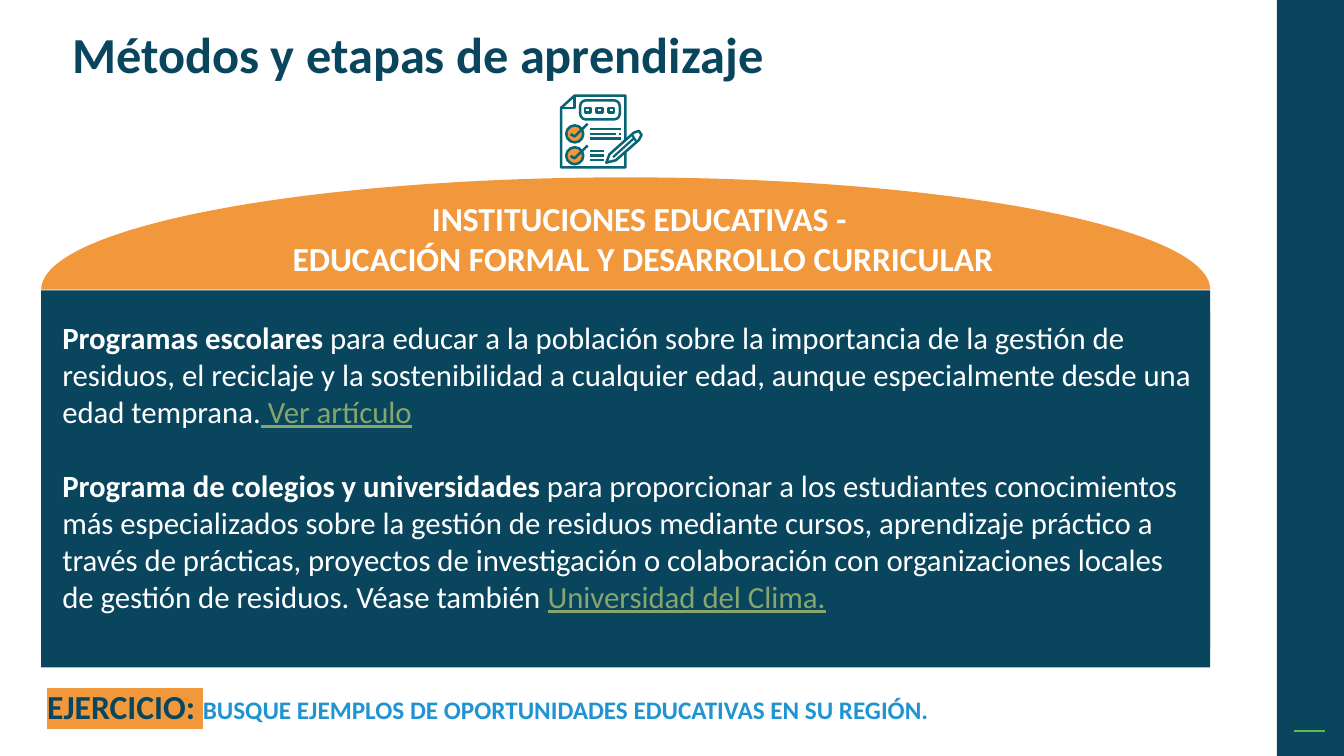
from lxml import etree
from pptx import Presentation
from pptx.dml.color import RGBColor
from pptx.enum.shapes import MSO_CONNECTOR, MSO_SHAPE
from pptx.enum.text import MSO_ANCHOR, MSO_AUTO_SIZE, PP_ALIGN
from pptx.oxml.ns import qn
from pptx.util import Cm, Pt
import math

RECTANGLE = MSO_SHAPE.RECTANGLE
ROUNDED = MSO_SHAPE.ROUNDED_RECTANGLE
OVAL = MSO_SHAPE.OVAL
STRAIGHT = MSO_CONNECTOR.STRAIGHT
LEFT, CENTER = PP_ALIGN.LEFT, PP_ALIGN.CENTER
TOP, MIDDLE = MSO_ANCHOR.TOP, MSO_ANCHOR.MIDDLE
NO_AUTOFIT = MSO_AUTO_SIZE.NONE

NAVY, ORANGE, TEAL, WHITE = "09465E", "F1983D", "086575", "FFFFFF"
LINK, BLUE, GREEN = "87A66E", "2094D2", "60BA47"

TITLE = {"size": Pt(36), "bold": True, "color": NAVY}
HEADING = {"size": Pt(24), "bold": True, "color": WHITE}
STRONG = {"size": Pt(22), "bold": True, "color": WHITE}
NORMAL = {"size": Pt(22), "bold": False, "color": WHITE}
LINKED = {"size": Pt(22), "bold": False, "color": LINK, "underline": True}
LABEL = {"size": Pt(24), "bold": True, "color": NAVY, "highlight": ORANGE}
TASK = {"size": Pt(18), "bold": True, "color": BLUE}

PROGRAMS = [
    [
        ("Programas escolares ", STRONG),
        ("para educar a la población sobre la importancia de la gestión de residuos, "
         "el reciclaje y la sostenibilidad a cualquier edad, aunque especialmente "
         "desde una edad temprana.", NORMAL),
        (" Ver artículo", LINKED),
    ],
    [
        ("Programa de colegios y universidades ", STRONG),
        ("para proporcionar a los estudiantes conocimientos más especializados sobre "
         "la gestión de residuos mediante cursos, aprendizaje práctico a través de "
         "prácticas, proyectos de investigación o colaboración con organizaciones "
         "locales de gestión de residuos. Véase también ", NORMAL),
        ("Universidad del Clima.", LINKED),
    ],
]


def color(value):
    return RGBColor.from_string(value)


def paint(shape, fill=None, line=None, width=1.8):
    shape.shadow.inherit = False
    if fill:
        shape.fill.solid()
        shape.fill.fore_color.rgb = color(fill)
    else:
        shape.fill.background()
    if line:
        shape.line.color.rgb = color(line)
        shape.line.width = Pt(width)
    else:
        shape.line.fill.background()
    return shape


def add_block(shapes, kind, box, fill=None, line=None):
    return paint(shapes.add_shape(kind, *map(Cm, box)), fill, line)


def add_outline(shapes, points, fill=None, line=None, close=False):
    start, *others = [(Cm(x), Cm(y)) for x, y in points]
    builder = shapes.build_freeform(*start, scale=1.0)
    builder.add_line_segments(others, close=close)
    return paint(builder.convert_to_shape(), fill, line)


def add_line(shapes, start, end, stroke, width):
    line = shapes.add_connector(STRAIGHT, *map(Cm, (*start, *end)))
    line.line.color.rgb = color(stroke)
    line.line.width = Pt(width)
    etree.SubElement(line._element.spPr, qn("a:effectLst"))


def add_run(paragraph, text, style):
    run = paragraph.add_run()
    run.text = text
    run.font.name = "Calibri"
    for name, value in style.items():
        if name == "color":
            run.font.color.rgb = color(value)
        elif name == "highlight":
            highlight = etree.Element(qn("a:highlight"))
            etree.SubElement(highlight, qn("a:srgbClr"), val=value)
            run._r.rPr.find(qn("a:solidFill")).addnext(highlight)
        else:
            setattr(run.font, name, value)


def write(shape, paragraphs, anchor=TOP, **layout):
    frame = shape.text_frame
    frame.word_wrap = True
    frame.auto_size = NO_AUTOFIT
    frame.vertical_anchor = anchor
    gap = layout.pop("gap", 0)
    for index, runs in enumerate(paragraphs):
        paragraph = frame.add_paragraph() if index else frame.paragraphs[0]
        paragraph.space_before = Pt(gap if index else 0)
        for name, value in layout.items():
            setattr(paragraph, name, value)
        for text, style in runs:
            add_run(paragraph, text, style)


def add_title(slide, text):
    title = slide.shapes.title
    title.left, title.top, title.width, title.height = map(Cm, (1.57, 0.66, 21.36, 1.55))
    write(title, [[(text, TITLE)]], MIDDLE, alignment=LEFT, line_spacing=0.9)


def add_text(slide, box, paragraphs, **layout):
    write(slide.shapes.add_textbox(*map(Cm, box)), paragraphs, **layout)


def add_dome(slide, left, top, width, height):
    steps = 90
    points = []
    for step in range(steps + 1):
        angle = math.pi * step / steps
        points.append((left + width / 2 * (1 - math.cos(angle)),
                       top + height * (1 - math.sin(angle))))
    add_outline(slide.shapes, points, fill=ORANGE, close=True)


def add_checklist_icon(slide):
    shapes = slide.shapes.add_group_shape().shapes
    fold_top, fold_side = (14.48, 2.41), (14.14, 2.72)
    page = [fold_top, (15.76, 2.41), (15.76, 4.22), (14.14, 4.22), fold_side]
    add_outline(shapes, page, line=TEAL, close=True)
    add_outline(shapes, [fold_top, (14.48, 2.72), fold_side], line=TEAL)
    header = add_block(shapes, ROUNDED, (14.62, 2.53, 1, 0.48), line=TEAL)
    header.adjustments[0] = 0.3
    for column in range(3):
        add_block(shapes, RECTANGLE, (14.74 + 0.3 * column, 2.72, 0.14, 0.12), line=TEAL)
    for offset in (0, 0.55):
        add_block(shapes, OVAL, (14.27, 3.16 + offset, 0.43, 0.43), ORANGE, TEAL)
        tick = [(14.38, 3.38), (14.48, 3.44), (14.81, 3.12)]
        add_outline(shapes, [(x, y + offset) for x, y in tick], line=TEAL)
    for top, ends in ((3.25, (15.65, 15.52, 15.65)), (3.8, (15.22, 15.22, 15.22))):
        for row, end in enumerate(ends):
            y = top + 0.12 * row
            add_line(shapes, (14.86, y), (end, y), TEAL, 1.6)
    add_line(shapes, (15.6, 3.37), (15.65, 3.37), TEAL, 1.6)
    pencil = [(15.28, 4.1), (15.36, 3.89), (15.98, 3.34), (16.1, 3.3),
              (16.17, 3.4), (16.1, 3.53), (15.52, 4.04)]
    add_outline(shapes, pencil, WHITE, TEAL, close=True)
    add_line(shapes, (15.45, 3.96), (15.98, 3.48), TEAL, 1.6)
    add_line(shapes, (15.93, 3.4), (16.03, 3.56), TEAL, 1.6)


def main():
    presentation = Presentation()
    presentation.slide_width, presentation.slide_height = Cm(33.87), Cm(19.05)
    slide = presentation.slides.add_slide(presentation.slide_layouts[5])

    add_block(slide.shapes, RECTANGLE, (32.18, 0, 1.69, 19.05), NAVY)
    add_line(slide.shapes, (32.61, 18.42), (33.4, 18.42), GREEN, 1)
    add_title(slide, "Métodos y etapas de aprendizaje")

    add_block(slide.shapes, RECTANGLE, (1.04, 7.32, 29.46, 9.5), NAVY)
    add_dome(slide, 1.04, 4.47, 29.46, 2.83)
    heading = ["INSTITUCIONES EDUCATIVAS - ", "EDUCACIÓN FORMAL Y DESARROLLO CURRICULAR"]
    add_text(slide, (5.64, 4.85, 21.13, 2.31),
             [[(line, HEADING)] for line in heading], alignment=CENTER)

    programs = add_block(slide.shapes, RECTANGLE, (1.32, 7.9, 29.18, 8.46), NAVY)
    write(programs, PROGRAMS, alignment=LEFT, gap=26.5)

    add_checklist_icon(slide)
    add_text(slide, (0.94, 17.17, 27.79, 1.27), [[
        ("EJERCICIO: ", LABEL),
        ("BUSQUE EJEMPLOS DE OPORTUNIDADES EDUCATIVAS EN SU REGIÓN.", TASK),
    ]])
    presentation.save("out.pptx")


if __name__ == "__main__":
    main()
